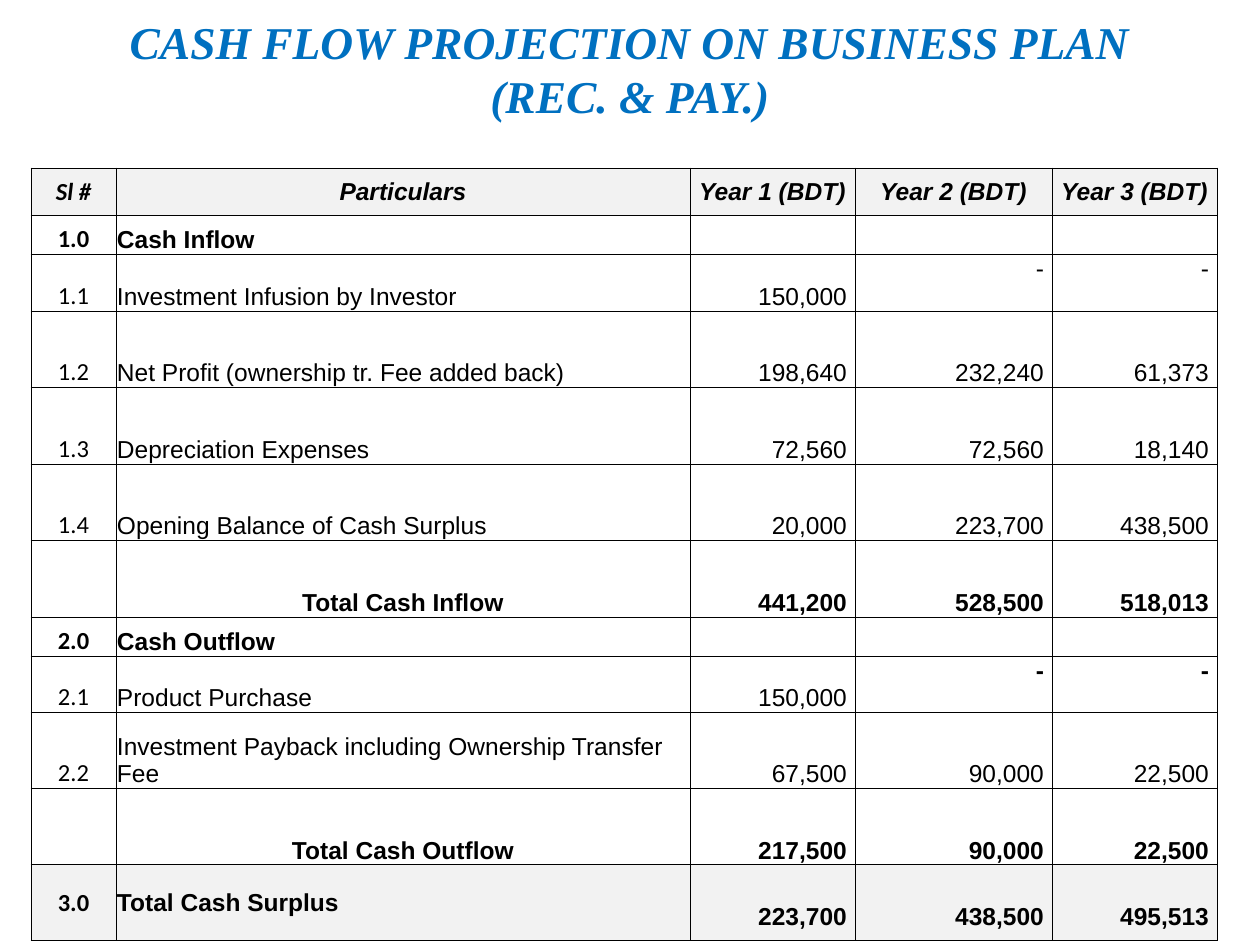
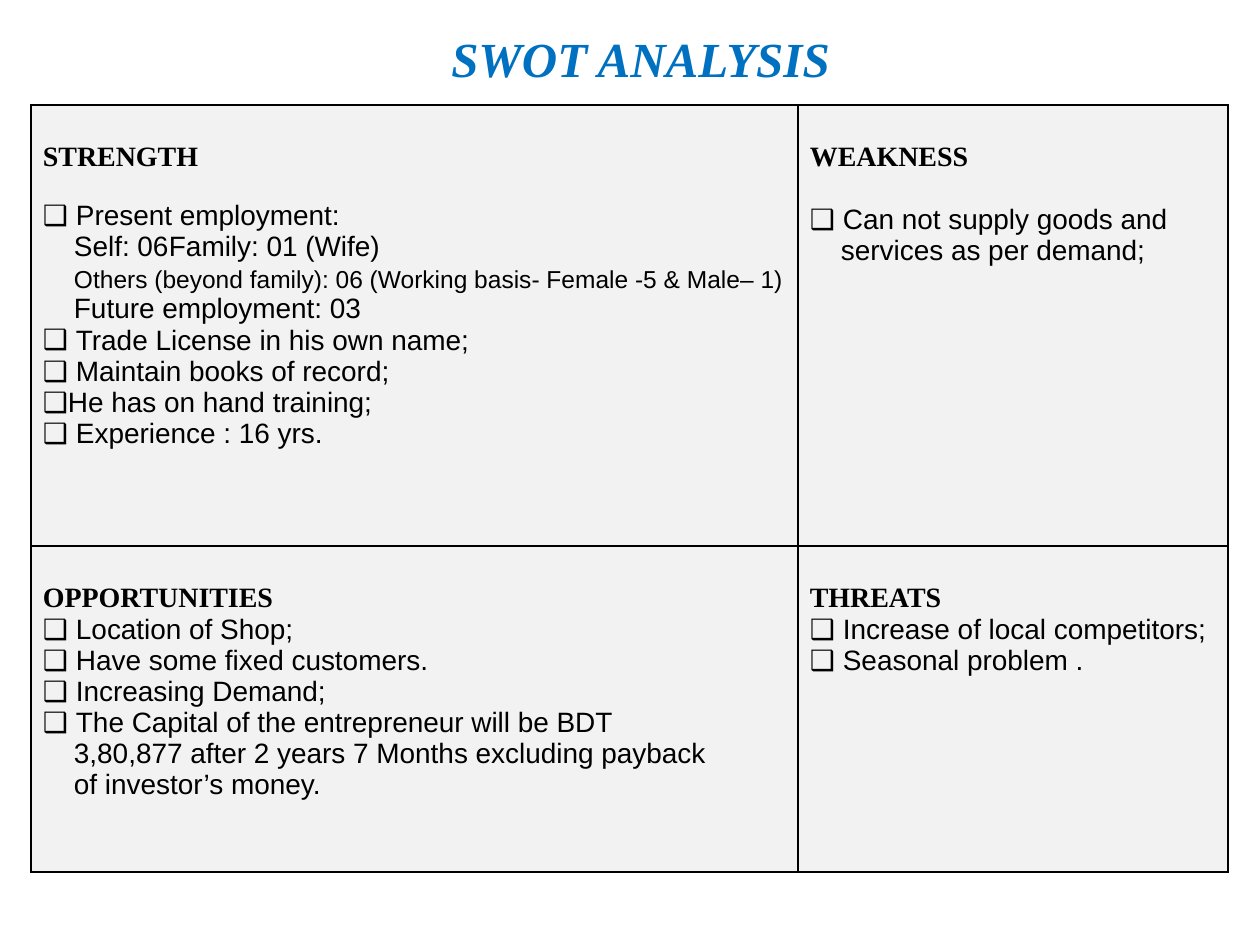
from lxml import etree
from pptx import Presentation
from pptx import util as u
from pptx.dml.color import RGBColor
from pptx.enum import text
from pptx.oxml.ns import qn

PX = 914400 / 126
COLORS = {"title": "0070C0", "ink": "000000", "shade": "F2F2F2"}
SERIF, SANS, LABEL = "Times New Roman", "Arial", "Calibri"
LEFT, CENTER, RIGHT, JUSTIFY = (
    text.PP_ALIGN.LEFT, text.PP_ALIGN.CENTER, text.PP_ALIGN.RIGHT, text.PP_ALIGN.JUSTIFY)
TOP, MIDDLE, BOTTOM = (
    text.MSO_ANCHOR.TOP, text.MSO_ANCHOR.MIDDLE, text.MSO_ANCHOR.BOTTOM)

# Cash flow rows: kind, number, particulars, three yearly values
CASH_ROWS = [
    ("head", "Sl #", "Particulars", "Year 1 (BDT)", "Year 2 (BDT)", "Year 3 (BDT)"),
    ("section", "1.0", "Cash Inflow", "", "", ""),
    ("item", "1.1", "Investment Infusion by Investor", "150,000", "-", "-"),
    ("item", "1.2", "Net Profit (ownership tr. Fee added back)", "198,640", "232,240", "61,373"),
    ("item", "1.3", "Depreciation Expenses", "72,560", "72,560", "18,140"),
    ("item", "1.4", "Opening Balance of Cash Surplus", "20,000", "223,700", "438,500"),
    ("total", "", "Total Cash Inflow", "441,200", "528,500", "518,013"),
    ("section", "2.0", "Cash Outflow", "", "", ""),
    ("item", "2.1", "Product Purchase", "150,000", "-", "-"),
    ("item", "2.2", "Investment Payback including Ownership Transfer Fee",
     "67,500", "90,000", "22,500"),
    ("total", "", "Total Cash Outflow", "217,500", "90,000", "22,500"),
    ("surplus", "3.0", "Total Cash Surplus", "223,700", "438,500", "495,513"),
]
CASH_COLS = [85, 574, 165, 197, 165]
CASH_HEIGHTS = [47, 39, 57, 76, 77, 76, 77, 39, 56, 76, 77, 76]

# SWOT quadrants: heading, gap below it, alignment, lines of (kind, text)
SWOT = [
    [("STRENGTH", 27, LEFT, [
        ("bullet", "Present employment:"),
        ("sub", "Self: 06\tFamily: 01 (Wife)"),
        ("small", "Others (beyond family): 06 (Working basis- Female -5 & Male– 1)"),
        ("sub", "Future employment: 03"),
        ("bullet", "Trade License in his own name;"),
        ("bullet", "Maintain books of record;"),
        ("tight", "He has on hand training;"),
        ("bullet", "Experience : 16 yrs.")]),
     ("WEAKNESS", 31, LEFT, [
        ("bullet", "Can not supply goods and"),
        ("sub", "services as per demand;")])],
    [("OPPORTUNITIES", 0, JUSTIFY, [
        ("bullet", "Location of Shop;"),
        ("bullet", "Have some fixed customers."),
        ("bullet", "Increasing Demand;"),
        ("bullet", "The Capital of the entrepreneur will be BDT"),
        ("sub", "3,80,877 after 2 years 7 Months excluding payback"),
        ("sub", "of investor’s money.")]),
     ("THREATS", 0, LEFT, [
        ("bullet", "Increase of local competitors;"),
        ("bullet", "Seasonal problem .")])],
]
HANG = {"bullet": 33, "tight": 25}
SUB_INDENT, FAMILY_TAB = 31, 149


def px(n):
    return u.Emu(round(n * PX))


def add_run(p, words, font, size, color="ink", bold=False, italic=False):
    r = p.add_run()
    r.text = words
    f = r.font
    f.name, f.size, f.bold, f.italic = font, u.Pt(size), bold, italic
    f.color.rgb = RGBColor.from_string(COLORS[color])


def add_slide(prs, title_lines, size, x, y, w, h):
    """Title-only slide with the shared title style."""
    s = prs.slides.add_slide(prs.slide_layouts[5])
    sp = s.shapes.title
    sp.left, sp.top, sp.width, sp.height = map(px, (x, y, w, h))
    tf = sp.text_frame
    tf.word_wrap, tf.auto_size = True, text.MSO_AUTO_SIZE.NONE
    tf.vertical_anchor = MIDDLE
    p = tf.paragraphs[0]
    p.alignment = CENTER
    for i, line in enumerate(title_lines):
        if i:
            p.add_line_break()
        add_run(p, line, SERIF, size, "title", True, True)
    return s


def add_grid(s, x, y, cols, heights):
    """Plain table without banding."""
    frame = s.shapes.add_table(len(heights), len(cols), px(x), px(y),
                               px(sum(cols)), px(sum(heights)))
    table = frame.table
    table.first_row = table.horz_banding = False
    for column, w in zip(table.columns, cols):
        column.width = px(w)
    for row, h in zip(table.rows, heights):
        row.height = px(h)
    return table


def style_cell(cell, border, shaded, margins, anchor=TOP):
    """Margins in px (left, top, right, bottom), borders, then fill."""
    (cell.margin_left, cell.margin_top,
     cell.margin_right, cell.margin_bottom) = map(px, margins)
    cell.vertical_anchor = anchor
    tc_pr = cell._tc.get_or_add_tcPr()
    for side in ("a:lnL", "a:lnR", "a:lnT", "a:lnB"):
        ln = etree.SubElement(tc_pr, qn(side), w=str(u.Pt(border)))
        fill = etree.SubElement(ln, qn("a:solidFill"))
        etree.SubElement(fill, qn("a:srgbClr"), val=COLORS["ink"])
    if shaded:
        cell.fill.solid()
        cell.fill.fore_color.rgb = RGBColor.from_string(COLORS["shade"])
    else:
        cell.fill.background()


def fill_cash_row(table, i, kind, values):
    """One cash flow row; its kind decides emphasis and alignment."""
    for j, value in enumerate(values):
        cell = table.cell(i, j)
        is_number = j > 1 and kind != "head"
        margins = [1, 1, 8 if is_number else 1, 0]
        anchor = MIDDLE if kind in ("head", "surplus") else BOTTOM
        if value == "-":
            anchor = TOP
        if is_number and kind == "surplus":
            margins[1] = 28
        style_cell(cell, 0.5, kind in ("head", "surplus"), margins, anchor)
        p = cell.text_frame.paragraphs[0]
        if not value:
            p.font.size = u.Pt(14)
            continue
        if is_number:
            p.alignment = RIGHT
        else:
            p.alignment = CENTER if j == 0 or kind in ("head", "total") else LEFT
        bold = kind != "item" or (value == "-" and values[0] == "2.1")
        add_run(p, value, SANS if j else LABEL, 14, bold=bold, italic=kind == "head")


def indent_line(p, kind):
    """Hanging bullet, or first-line indent for a continuation."""
    p_pr = p._p.get_or_add_pPr()
    if kind in HANG:
        p_pr.set("marL", str(px(HANG[kind])))
        p_pr.set("indent", str(-px(HANG[kind])))
        etree.SubElement(p_pr, qn("a:buFont"), typeface=SANS)
        etree.SubElement(p_pr, qn("a:buChar"), char="❑")
    else:
        p_pr.set("marL", "0")
        p_pr.set("indent", str(px(SUB_INDENT)))
        tabs = etree.SubElement(p_pr, qn("a:tabLst"))
        etree.SubElement(tabs, qn("a:tab"), pos=str(px(FAMILY_TAB)), algn="l")


def fill_quadrant(cell, heading, gap, align, lines):
    style_cell(cell, 1, True, (12, 37, 12, 6))
    tf = cell.text_frame
    add_run(tf.paragraphs[0], heading, SERIF, 16, bold=True)
    for i, (kind, words) in enumerate(lines):
        p = tf.add_paragraph()
        indent_line(p, kind)
        p.alignment = align
        if i == 0 and gap:
            p.space_before = px(gap)
        elif kind == "small":
            p.space_before = px(4)
        add_run(p, words, SANS, 14 if kind == "small" else 16)


def main():
    prs = Presentation()
    prs.slide_width, prs.slide_height = px(1260), px(945)

    # Cash flow projection
    s = add_slide(prs, ["CASH FLOW PROJECTION ON BUSINESS PLAN", "(REC. & PAY.)"],
                  26, 0, 21, 1260, 95)
    table = add_grid(s, 31, 168, CASH_COLS, CASH_HEIGHTS)
    for i, (kind, *values) in enumerate(CASH_ROWS):
        fill_cash_row(table, i, kind, values)

    # SWOT analysis
    s = add_slide(prs, ["SWOT ANALYSIS"], 28, 63, 10, 1155, 95)
    table = add_grid(s, 31, 105, [767, 430], [441, 326])
    for i, row in enumerate(SWOT):
        for j, quadrant in enumerate(row):
            fill_quadrant(table.cell(i, j), *quadrant)

    prs.save("out.pptx")


if __name__ == "__main__":
    main()
